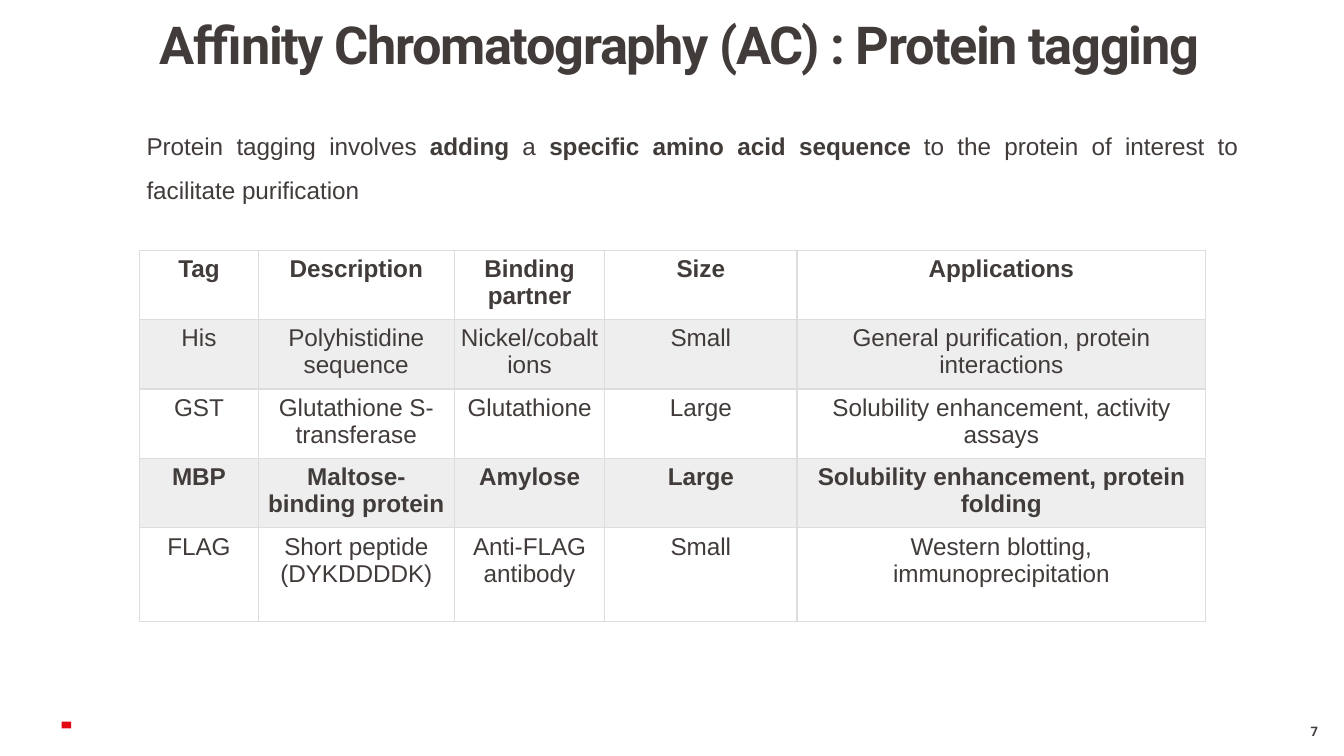
"""Build a slide on protein tagging for affinity chromatography."""
from lxml.etree import SubElement
from pptx import Presentation
from pptx.dml.color import RGBColor
from pptx.enum.shapes import MSO_SHAPE
from pptx.enum.text import MSO_ANCHOR, MSO_AUTO_SIZE, PP_ALIGN
from pptx.oxml.ns import qn
from pptx.util import Pt

INK = RGBColor(0x41, 0x3C, 0x3A)
RED = RGBColor(0xE3, 0x06, 0x13)
BAND = RGBColor(0xEE, 0xEE, 0xEE)
RULE = RGBColor(0xDD, 0xDD, 0xDD)

TITLE = dict(name="Roboto", size=Pt(28), bold=True)
NUMBER = dict(name="Roboto", size=Pt(7), bold=True)
TEXT = dict(name="Arial", size=Pt(13), bold=False)
STRONG = dict(TEXT, bold=True)

INTRO = [
    ("Protein tagging involves ", TEXT),
    ("adding", STRONG),
    (" a ", TEXT),
    ("specific amino acid sequence ", STRONG),
    ("to the protein of interest to facilitate purification", TEXT),
]
TAGS = [
    ("Tag", "Description", "Binding partner", "Size", "Applications"),
    ("His", "Polyhistidine sequence", "Nickel/cobalt ions", "Small",
     "General purification, protein interactions"),
    ("GST", "Glutathione S-transferase", "Glutathione", "Large",
     "Solubility enhancement, activity assays"),
    ("MBP", "Maltose-binding protein", "Amylose", "Large",
     "Solubility enhancement, protein folding"),
    ("FLAG", "Short peptide (DYKDDDDK)", "Anti-FLAG antibody", "Small",
     "Western blotting, immunoprecipitation"),
]
STRONG_ROWS = ("Tag", "MBP")
COL_WIDTHS = (63.4, 105.1, 80.6, 103, 218.9)
ROW_HEIGHTS = (37.2, 37.2, 37.2, 37.2, 50.4)


def apply(obj, **values):
    """Set each named attribute on an object."""
    for name, value in values.items():
        setattr(obj, name, value)


class Deck:
    """Hold the style and the current slide."""

    def __init__(self, prs):
        """Add a title and content slide."""
        self.s = prs.slides.add_slide(prs.slide_layouts[1])

    def place(self, sp, left, top, width, height):
        """Move and size a shape in points."""
        apply(sp, left=Pt(left), top=Pt(top), width=Pt(width), height=Pt(height))

    def frame(self, tf, insets, auto_size=MSO_AUTO_SIZE.NONE):
        """Format a text frame with left, top, right and bottom insets."""
        left, top, right, bottom = map(Pt, insets)
        apply(tf, margin_left=left, margin_top=top, margin_right=right,
              margin_bottom=bottom, word_wrap=True, auto_size=auto_size,
              vertical_anchor=MSO_ANCHOR.TOP)

    def paragraph(self, p, runs, **layout):
        """Fill a paragraph with formatted runs."""
        apply(p, space_before=Pt(0), **layout)
        for text, style in runs:
            r = p.add_run()
            r.text = text
            apply(r.font, **style)
            r.font.color.rgb = INK

    def title(self, text, box):
        """Fill the title placeholder."""
        sp = self.s.shapes.title
        self.place(sp, *box)
        self.frame(sp.text_frame, (14.4, 0, 5.8, 3.6))
        p = sp.text_frame.paragraphs[0]
        self.paragraph(p, [(text, TITLE)], alignment=PP_ALIGN.LEFT, line_spacing=0.9)
        p.runs[0]._r.get_or_add_rPr().set("spc", "-70")

    def body(self, runs, box):
        """Fill the body placeholder with one unbulleted paragraph."""
        sp = self.s.placeholders[1]
        self.place(sp, *box)
        self.frame(sp.text_frame, (7.2, 3.6, 7.2, 3.6), MSO_AUTO_SIZE.SHAPE_TO_FIT_TEXT)
        p = sp.text_frame.paragraphs[0]
        pPr = p._p.get_or_add_pPr()
        pPr.set("marL", "0")
        pPr.set("indent", "0")
        SubElement(pPr, qn("a:buNone"))
        self.paragraph(p, runs, alignment=PP_ALIGN.JUSTIFY, line_spacing=1.5)

    def number(self, text, box):
        """Add the slide number."""
        tf = self.s.shapes.add_textbox(*map(Pt, box)).text_frame
        self.frame(tf, (7.2, 0, 7.2, 0))
        self.paragraph(tf.paragraphs[0], [(text, NUMBER)], alignment=PP_ALIGN.CENTER)

    def mark(self, box):
        """Add the small red footer mark."""
        sp = self.s.shapes.add_shape(MSO_SHAPE.RECTANGLE, *map(Pt, box))
        sp.rotation = 270
        sp.shadow.inherit = False
        sp.fill.solid()
        sp.fill.fore_color.rgb = RED
        sp.line.fill.background()

    def borders(self, cell):
        """Draw a thin rule on every side of a cell."""
        tcPr = cell._tc.get_or_add_tcPr()
        for side in ("lnL", "lnR", "lnT", "lnB"):
            ln = SubElement(tcPr, qn(f"a:{side}"), w=str(int(Pt(0.75))))
            fill = SubElement(ln, qn("a:solidFill"))
            SubElement(fill, qn("a:srgbClr"), val=str(RULE))

    def cell(self, cell, text, style, banded):
        """Fill and format one table cell."""
        inset = Pt(2.9)
        apply(cell, margin_left=inset, margin_top=inset, margin_right=inset,
              margin_bottom=inset, vertical_anchor=MSO_ANCHOR.TOP)
        self.borders(cell)
        if banded:
            cell.fill.solid()
            cell.fill.fore_color.rgb = BAND
        else:
            cell.fill.background()
        self.paragraph(cell.text_frame.paragraphs[0], [(text, style)],
                       alignment=PP_ALIGN.CENTER)

    def table(self, rows, left, top):
        """Add the table of tags with alternate rows shaded."""
        size = sum(COL_WIDTHS), sum(ROW_HEIGHTS)
        table = self.s.shapes.add_table(
            len(rows), len(COL_WIDTHS), *map(Pt, (left, top, *size))).table
        apply(table, first_row=False, horz_banding=False)
        for col, width in zip(table.columns, COL_WIDTHS):
            col.width = Pt(width)
        for i, (row, height) in enumerate(zip(rows, ROW_HEIGHTS)):
            table.rows[i].height = Pt(height)
            style = STRONG if row[0] in STRONG_ROWS else TEXT
            for j, text in enumerate(row):
                self.cell(table.cell(i, j), text, style, i % 2 == 1)


def main():
    """Build and save the slide."""
    prs = Presentation()
    apply(prs, slide_width=Pt(720), slide_height=Pt(405))
    deck = Deck(prs)
    deck.mark((33.8, 385.9, 3.6, 5))
    deck.number("7", (684, 387.4, 40.3, 13))
    deck.body(INTRO, (71.3, 59, 599, 51.8))
    deck.title("Affinity Chromatography (AC) : Protein tagging", (71.3, 10.1, 599, 48.2))
    deck.table(TAGS, 74.9, 134)
    prs.save("out.pptx")


if __name__ == "__main__":
    main()
